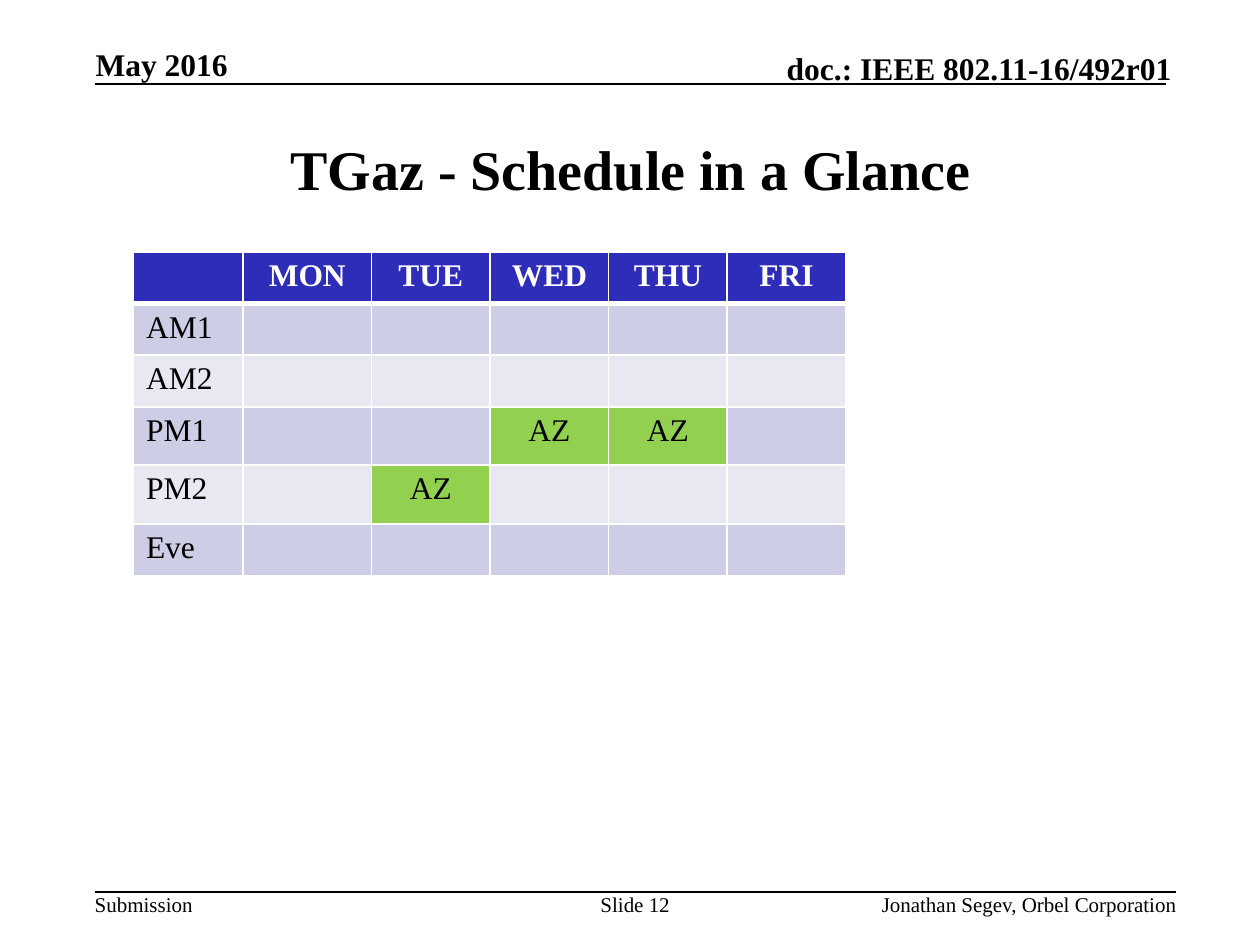
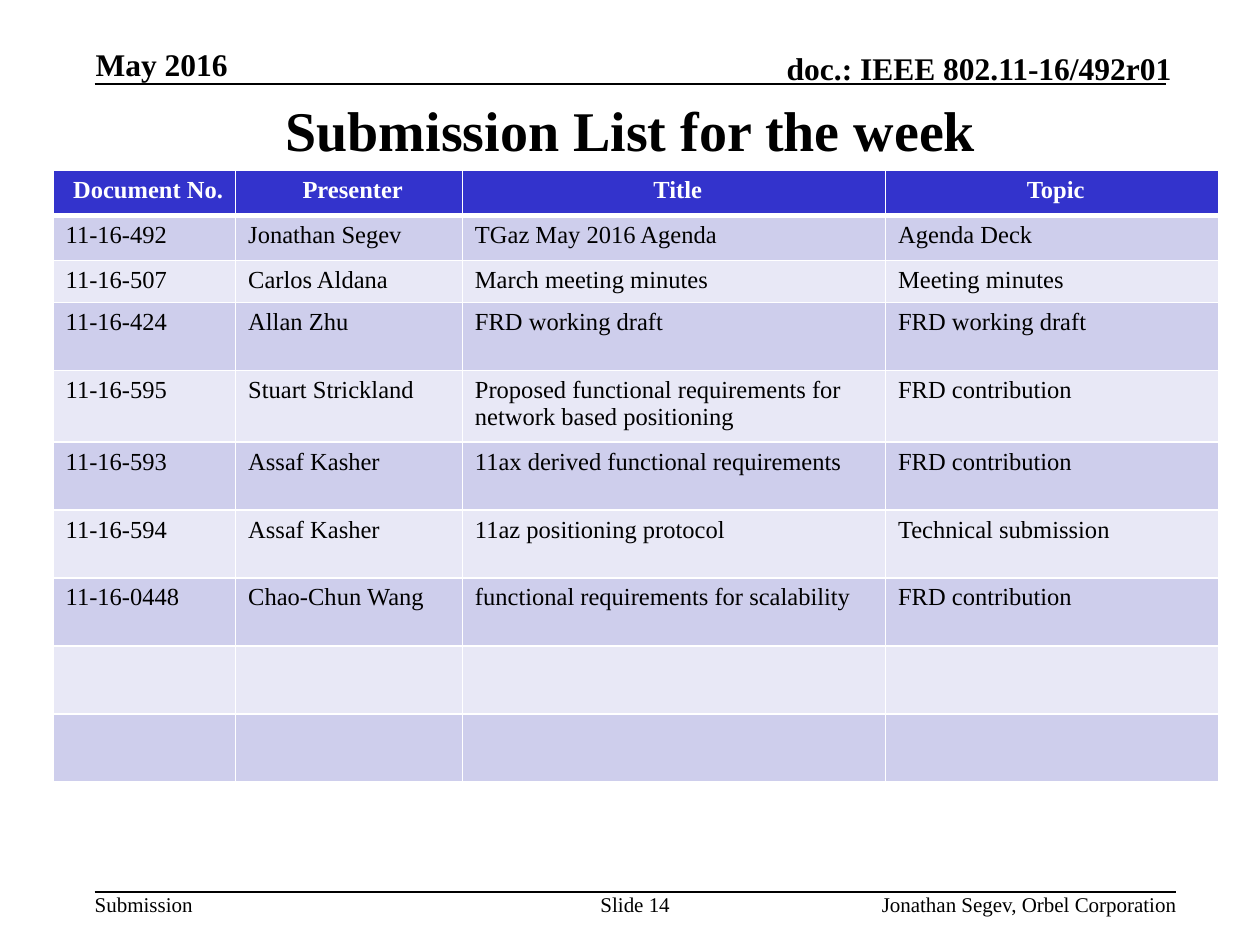
import pptx
import pptx.util
import pptx.dml.color
import pptx.enum.shapes
import pptx.enum.text
import pptx.oxml.ns
from lxml import etree

Cm = pptx.util.Cm
Pt = pptx.util.Pt
ALIGN = pptx.enum.text.PP_ALIGN
ANCHOR = pptx.enum.text.MSO_ANCHOR

# Shared look
FONT = "Times New Roman"
COLORS = {"ink": "000000", "white": "FFFFFF", "slot": "92D050"}
WEEK = {"head": "2D2DB9", "odd": "CDCDE6", "even": "E8E8F3"}
LIST = {"head": "3333CC", "odd": "CECEEC", "even": "E8E8F6"}

# Slide content
DAYS = ["", "MON", "TUE", "WED", "THU", "FRI"]
TIMES = ["AM1", "AM2", "PM1", "PM2", "Eve"]
SLOTS = {("PM1", "WED"), ("PM1", "THU"), ("PM2", "TUE")}
PAPERS = [
    ["Document No.", "Presenter", "Title", "Topic"],
    ["11-16-492", "Jonathan Segev", "TGaz May 2016 Agenda", "Agenda Deck"],
    ["11-16-507", "Carlos Aldana", "March meeting minutes", "Meeting minutes"],
    ["11-16-424", "Allan Zhu", "FRD working draft", "FRD working draft"],
    ["11-16-595", "Stuart Strickland",
     "Proposed functional requirements for network based positioning",
     "FRD contribution"],
    ["11-16-593", "Assaf Kasher", "11ax derived functional requirements",
     "FRD contribution"],
    ["11-16-594", "Assaf Kasher", "11az positioning protocol",
     "Technical submission"],
    ["11-16-0448", "Chao-Chun Wang", "functional requirements for scalability",
     "FRD contribution"],
    [""] * 4,
    [""] * 4,
]


def rgb(code):
    return pptx.dml.color.RGBColor.from_string(code)


def write(frame, text, size=12, bold=False, color="ink", align=ALIGN.LEFT):
    """Put one line of formatted text in a frame."""
    para = frame.paragraphs[0]
    para.alignment = align
    run = para.add_run()
    run.text = text
    run.font.name = FONT
    run.font.size = Pt(size)
    run.font.bold = bold
    run.font.color.rgb = rgb(COLORS[color])


def label(slide, text, left, top, width, height,
          anchor=ANCHOR.TOP, wrap=True, **style):
    box = slide.shapes.add_textbox(Cm(left), Cm(top), Cm(width), Cm(height))
    frame = box.text_frame
    frame.word_wrap = wrap
    frame.vertical_anchor = anchor
    frame.margin_left = frame.margin_right = 0
    frame.margin_top = frame.margin_bottom = 0
    write(frame, text, **style)


def rule(slide, left, right, top):
    line = slide.shapes.add_connector(
        pptx.enum.shapes.MSO_CONNECTOR.STRAIGHT,
        Cm(left), Cm(top), Cm(right), Cm(top))
    line.line.color.rgb = rgb(COLORS["ink"])
    line.line.width = Pt(1)
    etree.SubElement(line._element.spPr, pptx.oxml.ns.qn("a:effectLst"))


def border(cell, side, width):
    qn = pptx.oxml.ns.qn
    edge = etree.SubElement(cell._tc.get_or_add_tcPr(), qn("a:ln" + side),
                            w=str(Pt(width)))
    fill = etree.SubElement(edge, qn("a:solidFill"))
    etree.SubElement(fill, qn("a:srgbClr"), val=COLORS["white"])


def style(cell, row, fill):
    """Draw the cell's white borders, then its fill."""
    thick = {(0, "B"), (1, "T")}
    for side in "LRTB":
        border(cell, side, 3 if (row, side) in thick else 1)
    cell.fill.solid()
    cell.fill.fore_color.rgb = rgb(fill)


def grid(slide, rows, left, top, widths, heights, size, theme):
    """Add a banded table and return it."""
    table = slide.shapes.add_table(
        len(rows), len(widths), Cm(left), Cm(top),
        Cm(sum(widths)), Cm(sum(heights))).table
    for col, width in zip(table.columns, widths):
        col.width = Cm(width)
    for row, height in zip(table.rows, heights):
        row.height = Cm(height)
    for r, texts in enumerate(rows):
        band = "head" if r == 0 else "odd" if r % 2 else "even"
        for c, text in enumerate(texts):
            cell = table.cell(r, c)
            style(cell, r, theme[band])
            if text and r == 0:
                write(cell.text_frame, text, size=size, bold=True,
                      color="white", align=ALIGN.CENTER)
            elif text:
                write(cell.text_frame, text, size=size)
    return table


def page(deck, number, title, top, height):
    """Add a slide with its header, title and footer."""
    slide = deck.slides.add_slide(deck.slide_layouts[6])
    # Header
    rule(slide, 1.91, 23.5, 1.7)
    label(slide, "May 2016", 1.93, 0.91, 5.21, 0.76,
          anchor=ANCHOR.BOTTOM, size=18, bold=True)
    label(slide, "doc.: IEEE 802.11-16/492r01", 13.89, 0.99, 9.73, 0.76,
          anchor=ANCHOR.BOTTOM, size=18, bold=True, align=ALIGN.RIGHT)
    # Title
    label(slide, title, 1.92, top, 21.59, height, anchor=ANCHOR.MIDDLE,
          size=32, bold=True, align=ALIGN.CENTER)
    # Footer
    rule(slide, 1.91, 23.7, 17.99)
    label(slide, "Submission", 1.91, 17.98, 1.98, 0.51, wrap=False)
    label(slide, f"Slide {number}", 12.07, 17.98, 1.47, 1.02,
          align=ALIGN.CENTER)
    label(slide, "Jonathan Segev, Orbel Corporation", 14.88, 17.98, 8.84, 0.51,
          align=ALIGN.RIGHT)
    return slide


def week(deck):
    slide = page(deck, 12, "TGaz - Schedule in a Glance", 1.91, 2.95)
    rows = [DAYS] + [[time] + [""] * 5 for time in TIMES]
    table = grid(slide, rows, 2.69, 5.08, [2.21, 2.59] + [2.39] * 4,
                 [1.04, 1.04, 1.04, 1.17, 1.19, 1.04], 18, WEEK)
    # Booked meeting slots
    for time, day in SLOTS:
        cell = table.cell(TIMES.index(time) + 1, DAYS.index(day))
        cell.fill.fore_color.rgb = rgb(COLORS["slot"])
        write(cell.text_frame, "AZ", size=18, align=ALIGN.CENTER)


def papers(deck):
    slide = page(deck, 14, "Submission List for the week", 1.68, 1.83)
    table = grid(slide, PAPERS, 1.07, 3.43, [3.68, 4.57, 8.53, 6.71],
                 [0.91, 0.91, 0.81] + [1.37] * 7, 14, LIST)
    for cell in table.rows[0].cells:
        cell.margin_right = Cm(0.1)


def main():
    deck = pptx.Presentation()
    deck.slide_width, deck.slide_height = Cm(25.4), Cm(19.05)
    week(deck)
    papers(deck)
    deck.save("out.pptx")


if __name__ == "__main__":
    main()
